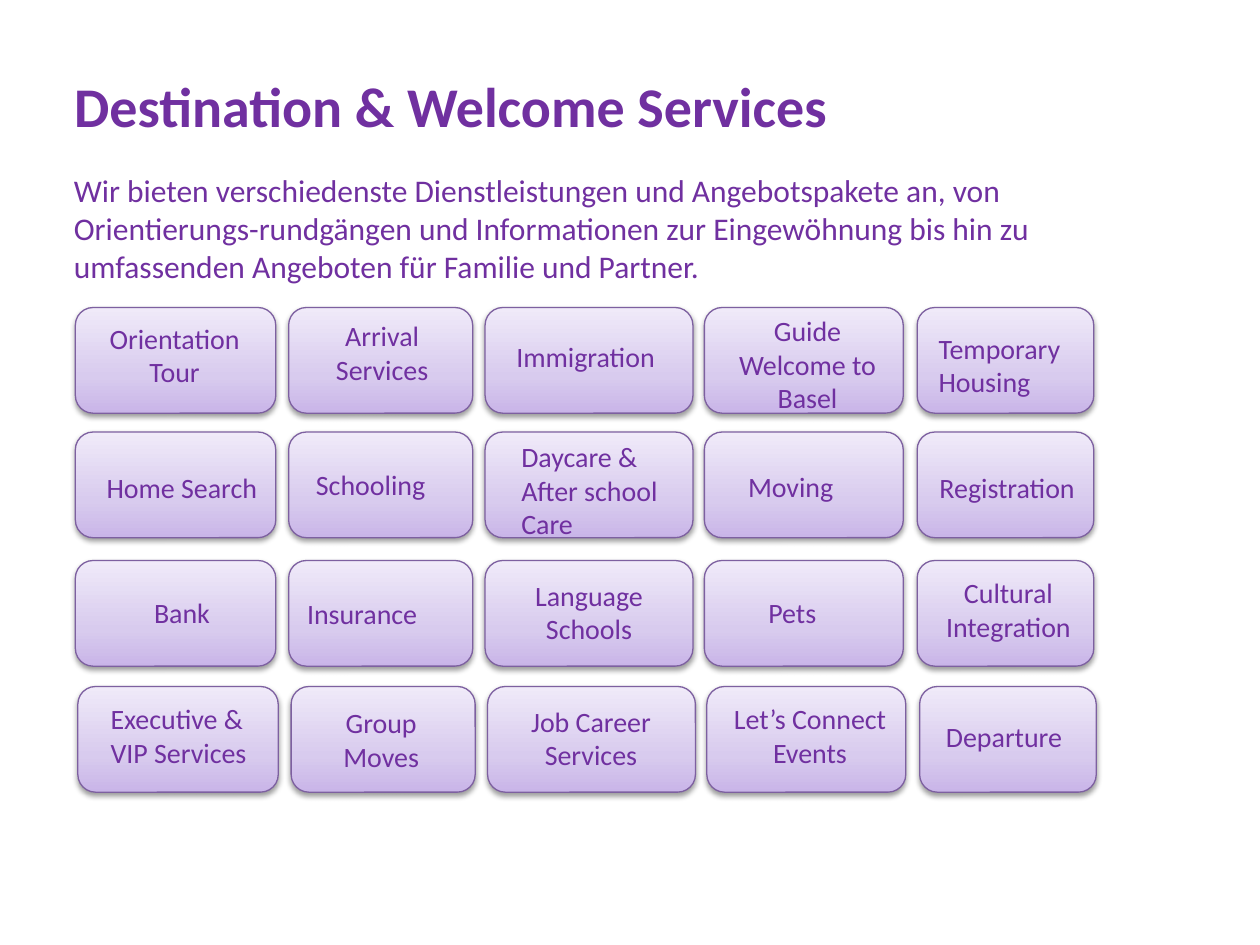
from copy import deepcopy

from lxml import etree
from pptx import Presentation
from pptx.dml.color import RGBColor
from pptx.enum.shapes import MSO_SHAPE
from pptx.enum.text import MSO_ANCHOR, PP_ALIGN
from pptx.oxml import parse_xml
from pptx.oxml.ns import qn
from pptx.util import Cm, Pt

ROUNDED = MSO_SHAPE.ROUNDED_RECTANGLE
MIDDLE, TOP = MSO_ANCHOR.MIDDLE, MSO_ANCHOR.TOP
LEFT, CENTER = PP_ALIGN.LEFT, PP_ALIGN.CENTER
PURPLE = "7030A0"
BORDER = "7D60A0"
GRADIENT = [(0, "C9B5E8"), (0.35, "D8CBEE"), (1, "F0EAF9")]
SHADOW = (
    '<a:outerShdw xmlns:a="http://schemas.openxmlformats.org/drawingml/2006/main" '
    'blurRad="40000" dist="20000" dir="5400000" rotWithShape="0">'
    '<a:srgbClr val="000000"><a:alpha val="38000"/></a:srgbClr></a:outerShdw>'
)


def color(value):
    return RGBColor.from_string(value)


def write(box, text, size, align=LEFT, anchor=TOP, bold=False):
    frame = box.text_frame
    frame.word_wrap = True
    frame.vertical_anchor = anchor
    para = frame.paragraphs[0]
    para.text = text
    para.alignment = align
    para.font.name = "Calibri"
    para.font.size = Pt(size)
    para.font.bold = bold
    para.font.color.rgb = color(PURPLE)


deck = Presentation()
deck.slide_width, deck.slide_height = Cm(25.4), Cm(19.05)
page = deck.slides.add_slide(deck.slide_layouts[5])

title = page.shapes.title
title.left, title.top, title.width, title.height = Cm(1.24), Cm(0.94), Cm(22.86), Cm(2.36)
write(title, "Destination & Welcome Services", 32, anchor=MIDDLE, bold=True)

intro = page.shapes.add_textbox(Cm(1.24), Cm(3.33), Cm(22.94), Cm(2.57))
write(
    intro,
    "Wir bieten verschiedenste Dienstleistungen und Angebotspakete an, von "
    "Orientierungs-rundgängen und Informationen zur Eingewöhnung bis hin zu "
    "umfassenden Angeboten für Familie und Partner.",
    18,
)

columns = [(1.52, 4.04), (5.82, 3.71), (9.78, 4.19), (14.2, 4.01), (18.49, 3.56)]
tile_height = 2.13
line_height = 0.68
rows = [
    (6.2, 0, [
        ("Orientation Tour", 1.5, 6.35, 4.04, 2, CENTER),
        ("Arrival Services", 5.94, 6.3, 3.53, 2, CENTER),
        ("Immigration", 10.16, 6.73, 3.81, 1, LEFT),
        ("Guide Welcome to Basel", 14.45, 6.2, 3.66, 3, CENTER),
        ("Temporary Housing", 18.67, 6.55, 3.51, 2, LEFT),
    ]),
    (8.71, 0, [
        ("Home Search", 1.9, 9.37, 3.6, 1, LEFT),
        ("Schooling", 6.12, 9.3, 3.53, 1, LEFT),
        ("Daycare & After school Care", 10.26, 8.74, 3.81, 3, LEFT),
        ("Moving", 14.83, 9.35, 3.07, 1, LEFT),
        ("Registration", 18.69, 9.37, 3.28, 1, LEFT),
    ]),
    (11.3, 0, [
        ("Bank", 1.65, 11.89, 4.04, 1, CENTER),
        ("Insurance", 5.94, 11.91, 3.53, 1, LEFT),
        ("Language Schools", 10.26, 11.53, 3.23, 2, CENTER),
        ("Pets", 15.24, 11.89, 2.26, 1, LEFT),
        ("Cultural Integration", 18.69, 11.48, 3.28, 2, CENTER),
    ]),
    (13.84, 0.05, [
        ("Executive & VIP Services", 1.98, 14.02, 3.63, 2, LEFT),
        ("Group Moves", 5.92, 14.1, 3.53, 2, CENTER),
        ("Job Career Services", 10.01, 14.07, 3.81, 2, CENTER),
        ("Let’s Connect Events", 14.5, 14.02, 3.66, 2, CENTER),
        ("Departure", 18.82, 14.38, 3.28, 1, LEFT),
    ]),
]

for tile_top, shift, services in rows:
    for (tile_left, tile_width), service in zip(columns, services):
        name, left, top, width, lines, align = service
        group = page.shapes.add_group_shape()
        tile = group.shapes.add_shape(
            ROUNDED, Cm(tile_left + shift), Cm(tile_top), Cm(tile_width), Cm(tile_height)
        )
        tile.fill.gradient()
        tile.fill.gradient_angle = 90
        stop_list = tile.fill._xPr.find(".//" + qn("a:gsLst"))
        stop_list.append(deepcopy(stop_list[0]))
        for stop, (position, shade) in zip(tile.fill.gradient_stops, GRADIENT):
            stop.position = position
            stop.color.rgb = color(shade)
        tile.line.color.rgb = color(BORDER)
        tile.line.width = Pt(0.75)
        tile.shadow.inherit = False
        tile._element.spPr.find(qn("a:effectLst")).append(parse_xml(SHADOW))

        label = group.shapes.add_textbox(
            Cm(left), Cm(top), Cm(width), Cm(0.26 + lines * line_height)
        )
        write(label, name, 16, align)

deck.save("out.pptx")
